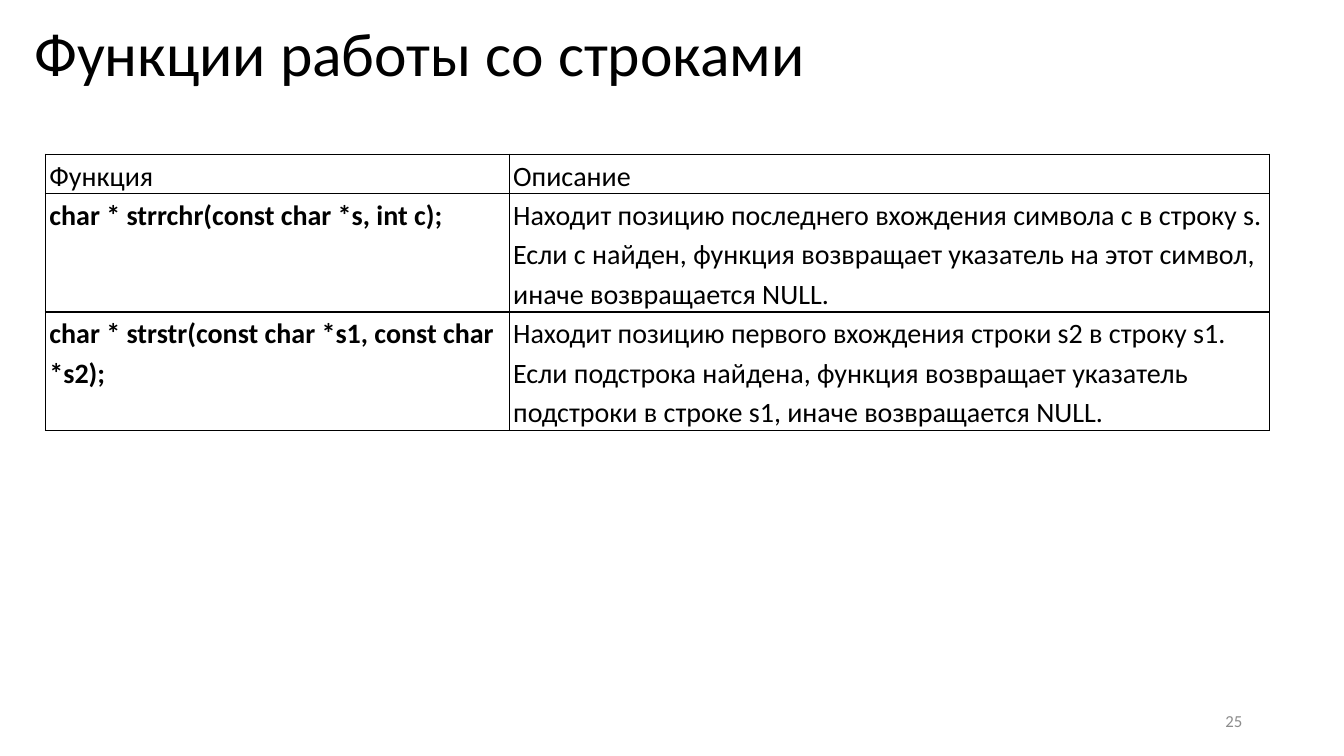
from pptx import Presentation
from pptx.dml.color import RGBColor
from pptx.enum.text import MSO_ANCHOR, PP_ALIGN
from pptx.oxml import parse_xml
from pptx.oxml.ns import nsdecls
from pptx.util import Inches, Pt

TITLE = "Функции работы со строками"
PAGE_NUMBER = "25"
FUNCTIONS = [
    ("Функция", "Описание"),
    ("char * strrchr(const char *s, int c);",
     "Находит позицию последнего вхождения символа c в строку s. "
     "Если c найден, функция возвращает указатель на этот символ, "
     "иначе возвращается NULL."),
    ("char * strstr(const char *s1, const char *s2);",
     "Находит позицию первого вхождения строки s2 в строку s1. "
     "Если подстрока найдена, функция возвращает указатель "
     "подстроки в строке s1, иначе возвращается NULL."),
]
COLUMN_WIDTHS = (4.6, 7.54)
LINE_HEIGHT = 0.39
ROW_LINES = (1, 3, 3)
BLACK, GRAY = "000000", "8C8C8C"


def style(paragraph, size, color, bold=False):
    """Set the font of a whole paragraph."""
    font = paragraph.font
    font.name, font.size, font.bold = "Calibri", Pt(size), bold
    font.color.rgb = RGBColor.from_string(color)


def add_text(slide, box, text, size, color, anchor, align):
    """Add a one-paragraph text box and return its frame."""
    frame = slide.shapes.add_textbox(*map(Inches, box)).text_frame
    frame.word_wrap = True
    frame.vertical_anchor = anchor
    paragraph = frame.paragraphs[0]
    paragraph.text, paragraph.alignment = text, align
    style(paragraph, size, color)
    return frame


def add_borders(cell, color, width):
    """Draw a solid line on all four sides of a cell."""
    properties = cell._tc.get_or_add_tcPr()
    for position, side in enumerate(("lnL", "lnR", "lnT", "lnB")):
        properties.insert(position, parse_xml(
            f'<a:{side} {nsdecls("a")} w="{Pt(width)}"><a:solidFill>'
            f'<a:srgbClr val="{color}"/></a:solidFill></a:{side}>'))


def fill_cell(cell, text, bold):
    """Write and format one table cell."""
    cell.fill.background()
    cell.margin_left = cell.margin_right = Inches(0.04)
    cell.margin_top = cell.margin_bottom = 0
    paragraph = cell.text_frame.paragraphs[0]
    paragraph.text = text
    paragraph.line_spacing, paragraph.space_after = 1.15, Pt(10)
    style(paragraph, 20, BLACK, bold)
    add_borders(cell, BLACK, 1)


def add_functions(slide):
    """Add the table of functions and their descriptions."""
    heights = [LINE_HEIGHT * lines for lines in ROW_LINES]
    box = (0.45, 1.53, sum(COLUMN_WIDTHS), sum(heights))
    table = slide.shapes.add_table(
        len(FUNCTIONS), len(COLUMN_WIDTHS), *map(Inches, box)).table
    table.first_row = table.horz_banding = False
    for column, width in zip(table.columns, COLUMN_WIDTHS):
        column.width = Inches(width)
    for r, (texts, height) in enumerate(zip(FUNCTIONS, heights)):
        table.rows[r].height = Inches(height)
        for c, text in enumerate(texts):
            fill_cell(table.cell(r, c), text, bold=r > 0 and c == 0)


presentation = Presentation()
presentation.slide_width = Inches(13.33)
presentation.slide_height = Inches(7.5)
slide = presentation.slides.add_slide(presentation.slide_layouts[6])
add_functions(slide)
add_text(slide, (0.24, 0.1, 12.52, 1.25), TITLE, 44, BLACK,
         MSO_ANCHOR.TOP, PP_ALIGN.LEFT)
add_text(slide, (9.42, 6.95, 3, 0.4), PAGE_NUMBER, 12, GRAY,
         MSO_ANCHOR.MIDDLE, PP_ALIGN.RIGHT)
presentation.save("out.pptx")
